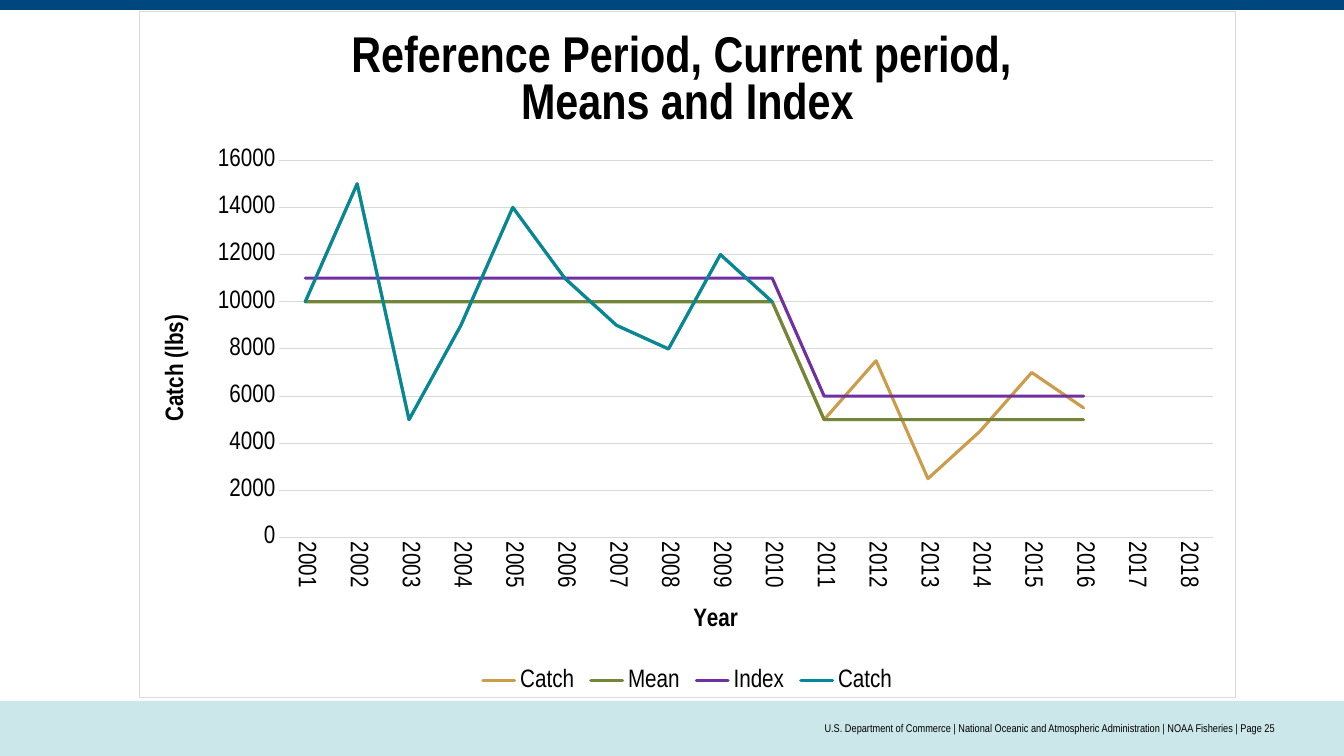
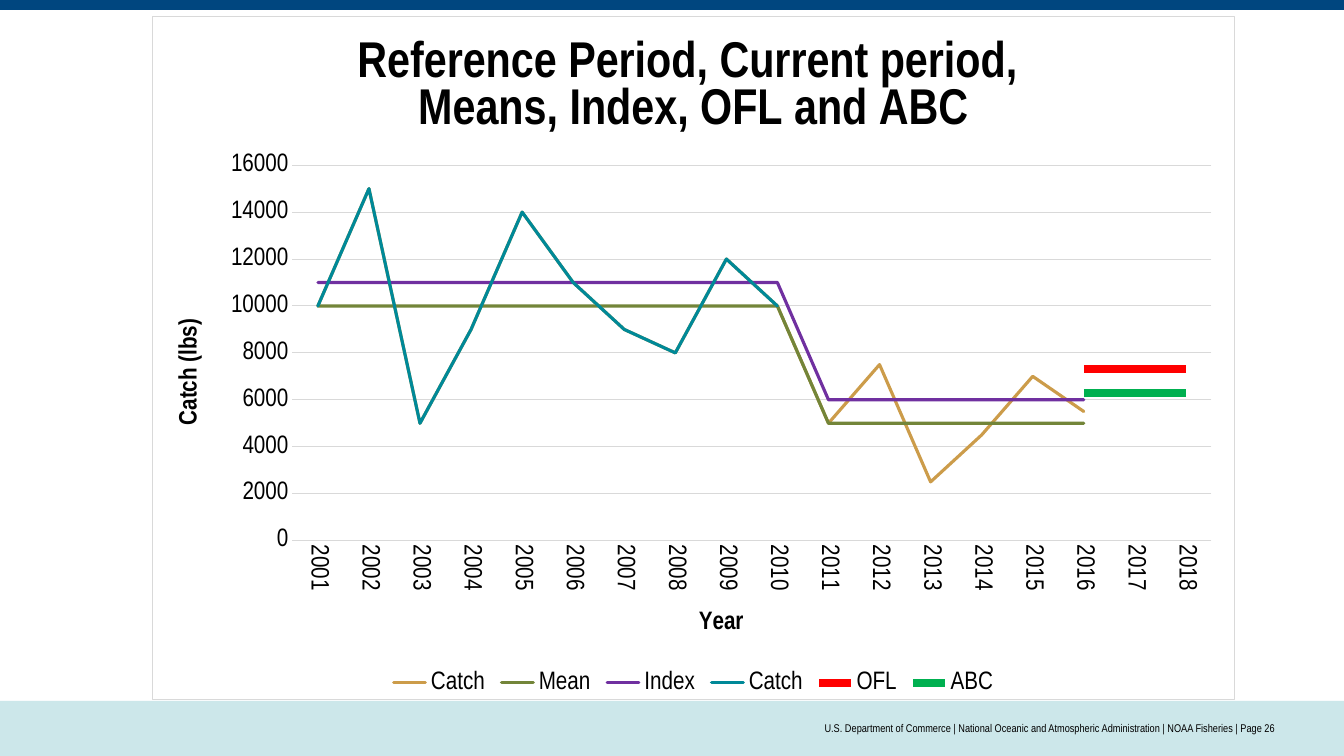
from pptx import Presentation
from pptx.chart.data import CategoryChartData
from pptx.dml.color import RGBColor
from pptx.enum.chart import XL_CHART_TYPE, XL_LEGEND_POSITION, XL_TICK_MARK
from pptx.enum.shapes import MSO_SHAPE
from pptx.enum.text import MSO_ANCHOR, PP_ALIGN
from pptx.oxml import parse_xml
from pptx.oxml.ns import nsdecls
from pptx.util import Pt

LINE = XL_CHART_TYPE.LINE
BOTTOM = XL_LEGEND_POSITION.BOTTOM
NONE = XL_TICK_MARK.NONE
RECT = MSO_SHAPE.RECTANGLE
MIDDLE = MSO_ANCHOR.MIDDLE
RIGHT = PP_ALIGN.RIGHT

BLACK = RGBColor(0x00, 0x00, 0x00)
NAVY = RGBColor(0x00, 0x46, 0x7F)
PALE = RGBColor(0xCC, 0xE7, 0xEA)
GREY = RGBColor(0xD9, 0xD9, 0xD9)
GOLD = RGBColor(0xCC, 0x9C, 0x4A)
OLIVE = RGBColor(0x73, 0x85, 0x39)
PURPLE = RGBColor(0x70, 0x30, 0xA0)
TEAL = RGBColor(0x00, 0x89, 0x98)
RED = RGBColor(0xFF, 0x00, 0x00)
GREEN = RGBColor(0x00, 0xB0, 0x50)

FONT = "Arial Narrow"
WIDE, HIGH = 1344, 756
FOOT = (
    "U.S. Department of Commerce",
    "National Oceanic and Atmospheric Administration",
    "NOAA Fisheries",
)

YEARS = range(2001, 2019)
PAST = [10000, 15000, 5000, 9000, 14000, 11000, 9000, 8000, 12000, 10000]
NOW = [5000, 7500, 2500, 4500, 7000, 5500]
GAP = [None] * 2
TRENDS = [
    ("Catch", PAST + NOW + GAP, GOLD, 2.25),
    ("Mean", [10000] * 10 + [5000] * 6 + GAP, OLIVE, 2.25),
    ("Index", [11000] * 10 + [6000] * 6 + GAP, PURPLE, 2.25),
    ("Catch", PAST + [None] * 8, TEAL, 2.25),
]
LIMITS = [
    ("OFL", [None] * 15 + [7300] * 3, RED, 6),
    ("ABC", [None] * 15 + [6300] * 3, GREEN, 6),
]
# page, chart box, plot box, title lines, series
PAGES = [
    (25, (139, 11, 1097, 687), (279, 160, 935, 378),
     ("Reference Period, Current period, ", "Means and Index"), TRENDS),
    (26, (152, 16, 1083, 684), (292, 165, 920, 376),
     ("Reference Period, Current period, ", "Means, Index, OFL and ABC"),
     TRENDS + LIMITS),
]


def px(*vals):
    """Turn pixels (100.8 to the inch) into EMU."""
    return [round(v * 914400 / 100.8) for v in vals]


def style(font, size, bold=False):
    font.name = FONT
    font.size = Pt(size)
    font.bold = bold
    font.color.rgb = BLACK


prs = Presentation()
prs.slide_width, prs.slide_height = px(WIDE, HIGH)
blank = prs.slide_layouts[6]
slides = [prs.slides.add_slide(blank) for _ in PAGES]

# Bands live on the master, behind its placeholders
tree = prs.slide_master.shapes.element
for i, (top, high, color) in enumerate([(701, 55, PALE), (0, 10, NAVY)]):
    band = slides[0].shapes.add_shape(RECT, *px(0, top, WIDE, high))
    band.shadow.inherit = False
    band.fill.solid()
    band.fill.fore_color.rgb = color
    band.line.fill.background()
    band.element.nvSpPr.cNvPr.set("id", str(100 + i))
    tree.insert(2 + i, band.element)

for slide, (page, box, plot, lines, series) in zip(slides, PAGES):
    foot = slide.shapes.add_textbox(*px(336, 701, 940, 55)).text_frame
    foot.word_wrap = True
    foot.vertical_anchor = MIDDLE
    foot.margin_left = foot.margin_right = 0
    para = foot.paragraphs[0]
    para.alignment = RIGHT
    run = para.add_run()
    run.text = " | ".join([*FOOT, f"Page {page}"])
    style(run.font, 8)

    data = CategoryChartData()
    data.categories = [str(year) for year in YEARS]
    for name, vals, color, width in series:
        data.add_series(name, vals)
    chart = slide.shapes.add_chart(LINE, *px(*box), data).chart
    style(chart.font, 18)
    chart.has_legend = True
    chart.legend.position = BOTTOM
    chart.legend.include_in_layout = False

    title = chart.chart_title.text_frame
    for i, text in enumerate(lines):
        para = title.add_paragraph() if i else title.paragraphs[0]
        run = para.add_run()
        run.text = text
        style(run.font, 36, True)

    years, catch = chart.category_axis, chart.value_axis
    for axis, text in ((years, "Year"), (catch, "Catch (lbs)")):
        axis.major_tick_mark = axis.minor_tick_mark = NONE
        style(axis.tick_labels.font, 18)
        run = axis.axis_title.text_frame.paragraphs[0].add_run()
        run.text = text
        style(run.font, 18, True)
    catch.minimum_scale, catch.maximum_scale = 0, 16000
    catch.major_unit = 2000
    catch.format.line.fill.background()
    for line in (years.format.line, catch.major_gridlines.format.line):
        line.color.rgb = GREY
        line.width = Pt(0.75)

    chart.plots[0].vary_by_categories = False
    for trend, (name, vals, color, width) in zip(chart.plots[0].series, series):
        trend.smooth = False
        trend.format.line.color.rgb = color
        trend.format.line.width = Pt(width)

    root = chart.element
    for ln in root.xpath(".//c:ser/c:spPr/a:ln")[:len(TRENDS)]:
        ln.set("cap", "rnd")
    for route, turn in (("c:catAx/c:txPr", 5400000), ("c:valAx/c:title", -5400000)):
        body = root.xpath(f".//{route}//a:bodyPr")[0]
        body.set("rot", str(turn))
        body.set("vert", "horz")

    # Frame of the chart and inner plot area
    root.xpath("c:txPr")[0].addprevious(parse_xml(
        f'<c:spPr {nsdecls("c", "a")}>'
        '<a:solidFill><a:srgbClr val="FFFFFF"/></a:solidFill>'
        f'<a:ln w="{Pt(0.75)}"><a:solidFill><a:srgbClr val="{GREY}"/>'
        '</a:solidFill></a:ln></c:spPr>'))
    left, top, wide, high = box
    parts = {
        "x": (plot[0] - left) / wide,
        "y": (plot[1] - top) / high,
        "w": plot[2] / wide,
        "h": plot[3] / high,
    }
    modes = "".join(f'<c:{k}Mode val="edge"/>' for k in "xy")
    sizes = "".join(f'<c:{k} val="{v:.4f}"/>' for k, v in parts.items())
    area = root.xpath("c:chart/c:plotArea")[0]
    for old in area.xpath("c:layout"):
        area.remove(old)
    area.insert(0, parse_xml(
        f'<c:layout {nsdecls("c")}><c:manualLayout>'
        f'<c:layoutTarget val="inner"/>{modes}{sizes}'
        '</c:manualLayout></c:layout>'))

prs.save("out.pptx")
